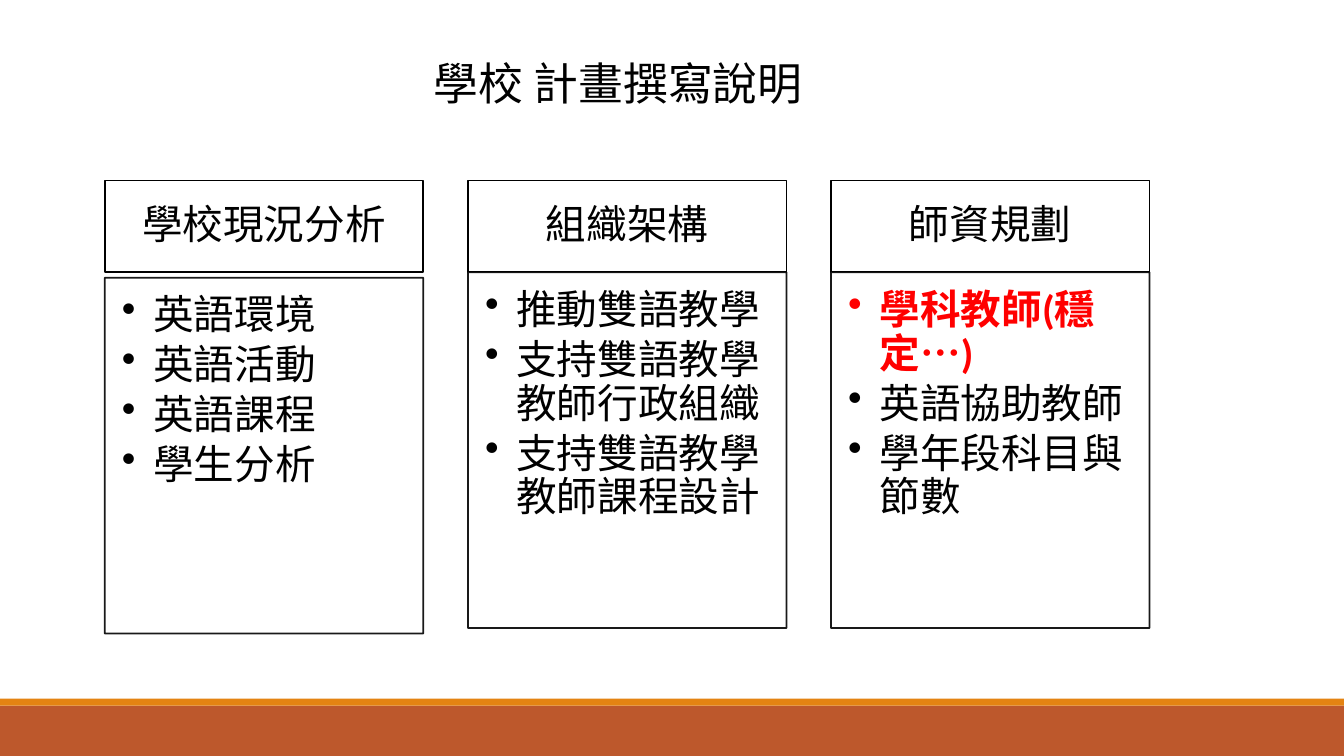
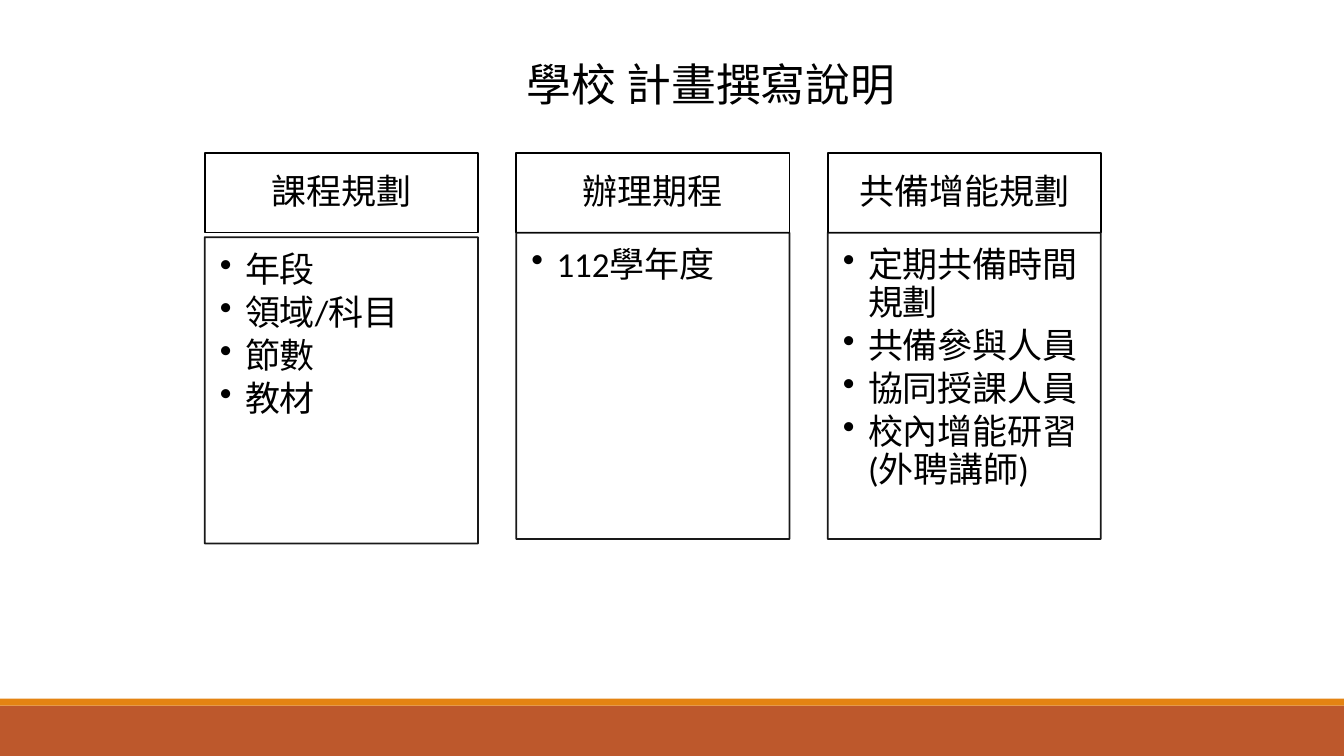
from dataclasses import dataclass

import lxml.etree
import pptx
import pptx.dml.color
import pptx.enum.shapes
import pptx.enum.text
import pptx.oxml.ns
import pptx.util

RGB = pptx.dml.color.RGBColor
ALIGN = pptx.enum.text.PP_ALIGN
ANCHOR = pptx.enum.text.MSO_ANCHOR
qn = pptx.oxml.ns.qn

SLIDE_WIDTH = pptx.util.Inches(13.33)
SLIDE_HEIGHT = pptx.util.Inches(7.5)


@dataclass(frozen=True)
class Theme:
    ink: RGB = RGB(0, 0, 0)
    paper: RGB = RGB(255, 255, 255)
    alert: RGB = RGB(255, 0, 0)
    footer: RGB = RGB(0xBD, 0x58, 0x2C)
    stripe: RGB = RGB(0xE4, 0x83, 0x12)
    latin_font: str = "Calibri"
    asian_font: str = "Noto Sans CJK SC"
    title_size: int = 32
    outline: float = 1.25
    line_spacing: float = 0.9
    header_space: float = 0.35
    bullet_space: float = 0.15
    panel_opacity: int = 90


THEME = Theme()


@dataclass(frozen=True)
class Box:
    """A rectangle in percent of the slide's width and height."""
    left: float
    top: float
    width: float
    height: float

    def emu(self) -> tuple[int, int, int, int]:
        return (int(SLIDE_WIDTH * self.left / 100), int(SLIDE_HEIGHT * self.top / 100),
                int(SLIDE_WIDTH * self.width / 100), int(SLIDE_HEIGHT * self.height / 100))


@dataclass(frozen=True)
class Bullet:
    text: str
    alert: bool = False


@dataclass(frozen=True)
class Card:
    header: str
    bullets: tuple[Bullet, ...]


@dataclass(frozen=True)
class Board:
    """One slide: a title and a row of cards; first_drop lowers the first panel."""
    title: str
    title_box: Box
    first_header: Box
    panel_height: float
    first_drop: float
    text_size: int
    indent: float
    header_insets: tuple[float, ...]
    panel_insets: tuple[float, ...]
    cards: tuple[Card, ...]


CARD_PITCH = 1.14  # in card widths
FOOTER = Box(0, 93.33, 100, 6.67)
STRIPE = Box(0, 92.4, 100, 0.93)
TITLE = "學校 計畫撰寫說明"

BOARDS = (
    Board(
        TITLE, Box(29.7, 6.67, 32.63, 8.53), Box(7.8, 23.87, 23.7, 12.13),
        47.07, 0.73, 29, 0.31, (0.23, 0.13, 0.23, 0.13), (0.17, 0.17, 0.23, 0.25),
        (
            Card("學校現況分析", (Bullet("英語環境"), Bullet("英語活動"),
                            Bullet("英語課程"), Bullet("學生分析"))),
            Card("組織架構", (Bullet("推動雙語教學"), Bullet("支持雙語教學教師行政組織"),
                          Bullet("支持雙語教學教師課程設計"))),
            Card("師資規劃", (Bullet("學科教師(穩定…)", alert=True), Bullet("英語協助教師"),
                          Bullet("學年段科目與節數"))),
        ),
    ),
    Board(
        TITLE, Box(36.9, 6.8, 32.03, 8.53), Box(15.23, 20.27, 20.33, 10.5),
        40.53, 0.6, 25, 0.25, (0.19, 0.11, 0.19, 0.11), (0.15, 0.15, 0.19, 0.22),
        (
            Card("課程規劃", (Bullet("年段"), Bullet("領域/科目"), Bullet("節數"), Bullet("教材"))),
            Card("辦理期程", (Bullet("112學年度"),)),
            Card("共備增能規劃", (Bullet("定期共備時間規劃"), Bullet("共備參與人員"),
                            Bullet("協同授課人員"), Bullet("校內增能研習(外聘講師)"))),
        ),
    ),
)


def add_rectangle(page, box: Box, fill: RGB, outlined: bool = False):
    shape = page.shapes.add_shape(pptx.enum.shapes.MSO_SHAPE.RECTANGLE, *box.emu())
    shape.shadow.inherit = False
    shape.fill.solid()
    shape.fill.fore_color.rgb = fill
    if outlined:
        shape.line.color.rgb = THEME.ink
        shape.line.width = pptx.util.Pt(THEME.outline)
    else:
        shape.line.fill.background()
    return shape


def set_opacity(shape, percent: int) -> None:
    """Apply one opacity to both the fill and the outline."""
    for color in shape._element.spPr.iter(qn("a:srgbClr")):
        lxml.etree.SubElement(color, qn("a:alpha"), val=str(percent * 1000))


def set_frame(shape, insets: tuple[float, ...], anchor: ANCHOR):
    frame = shape.text_frame
    frame.word_wrap = True
    frame.vertical_anchor = anchor
    (frame.margin_left, frame.margin_top,
     frame.margin_right, frame.margin_bottom) = map(pptx.util.Inches, insets)
    return frame


def add_span(para, text: str, size: float, latin: str, color: RGB, bold: bool = False) -> None:
    span = para.add_run()
    span.text = text
    span.font.size = pptx.util.Pt(size)
    span.font.name = latin
    span.font.bold = bold
    span.font.color.rgb = color
    lxml.etree.SubElement(span._r.get_or_add_rPr(), qn("a:ea"), typeface=THEME.asian_font)


def set_spacing(para, size: float, share_after: float) -> None:
    para.line_spacing = THEME.line_spacing
    para.space_after = pptx.util.Pt(size * share_after)


def set_bullet(para, indent: float) -> None:
    properties = para._p.get_or_add_pPr()
    length = pptx.util.Inches(indent)
    properties.set("marL", str(length))
    properties.set("indent", str(-length))
    lxml.etree.SubElement(properties, qn("a:buChar"), char="•")


def add_title(page, board: Board) -> None:
    box = page.shapes.add_textbox(*board.title_box.emu())
    frame = box.text_frame
    frame.word_wrap = True
    frame.auto_size = pptx.enum.text.MSO_AUTO_SIZE.SHAPE_TO_FIT_TEXT
    para = frame.paragraphs[0]
    para.alignment = ALIGN.CENTER
    add_span(para, board.title, THEME.title_size, THEME.asian_font, THEME.ink)


def add_header(page, board: Board, box: Box, text: str) -> None:
    header = add_rectangle(page, box, THEME.paper, outlined=True)
    para = set_frame(header, board.header_insets, ANCHOR.MIDDLE).paragraphs[0]
    para.alignment = ALIGN.CENTER
    set_spacing(para, board.text_size, THEME.header_space)
    add_span(para, text, board.text_size, THEME.latin_font, THEME.ink)


def add_panel(page, board: Board, box: Box, bullets: tuple[Bullet, ...]) -> None:
    panel = add_rectangle(page, box, THEME.paper, outlined=True)
    set_opacity(panel, THEME.panel_opacity)
    frame = set_frame(panel, board.panel_insets, ANCHOR.TOP)
    for index, bullet in enumerate(bullets):
        para = frame.add_paragraph() if index else frame.paragraphs[0]
        para.alignment = ALIGN.LEFT
        set_spacing(para, board.text_size, THEME.bullet_space)
        set_bullet(para, board.indent)
        color = THEME.alert if bullet.alert else THEME.ink
        add_span(para, bullet.text, board.text_size, THEME.latin_font, color, bullet.alert)


def add_board(deck, board: Board) -> None:
    page = deck.slides.add_slide(deck.slide_layouts[6])
    add_rectangle(page, FOOTER, THEME.footer)
    add_rectangle(page, STRIPE, THEME.stripe)
    add_title(page, board)
    first = board.first_header
    for index, card in enumerate(board.cards):
        left = first.left + index * CARD_PITCH * first.width
        drop = 0 if index else board.first_drop
        add_header(page, board, Box(left, first.top, first.width, first.height), card.header)
        panel_top = first.top + first.height + drop
        add_panel(page, board, Box(left, panel_top, first.width, board.panel_height), card.bullets)


def main() -> None:
    deck = pptx.Presentation()
    deck.slide_width, deck.slide_height = SLIDE_WIDTH, SLIDE_HEIGHT
    for board in BOARDS:
        add_board(deck, board)
    deck.save("out.pptx")


if __name__ == "__main__":
    main()
